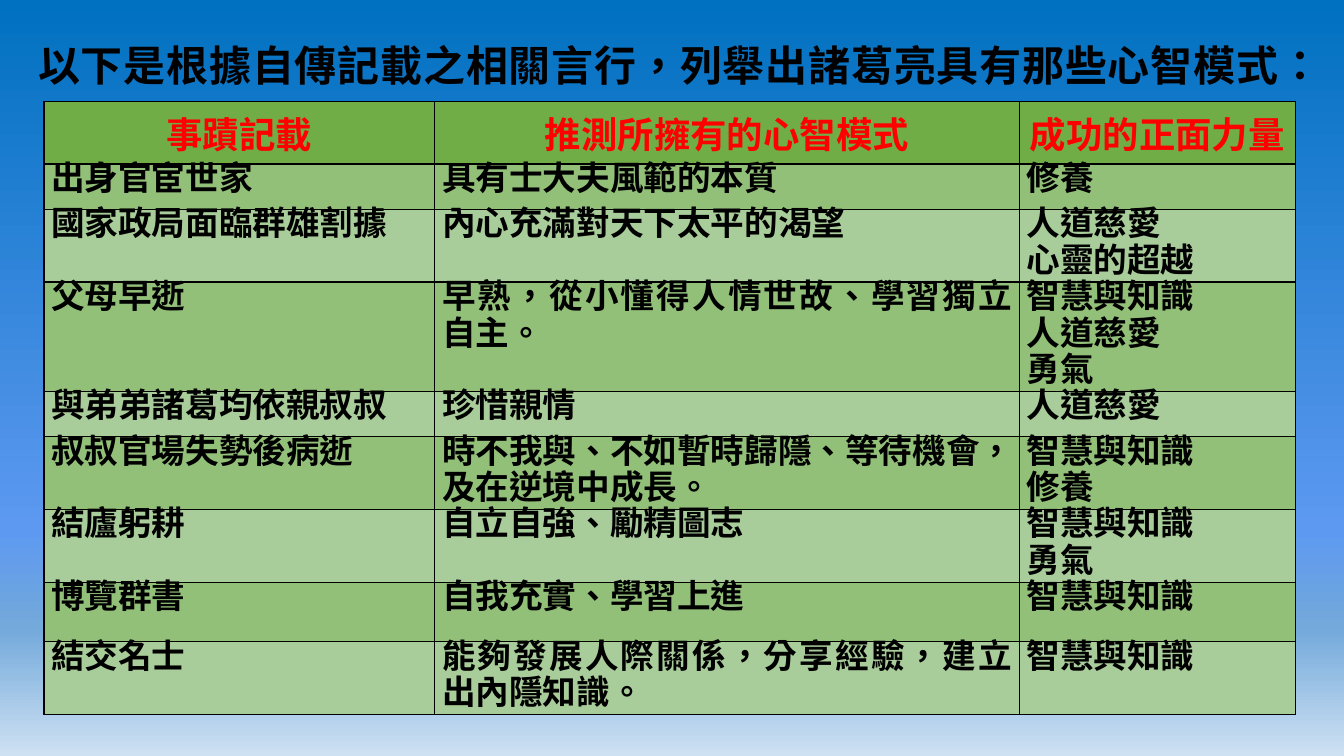
from dataclasses import dataclass

from lxml import etree
from pptx import Presentation
from pptx.dml.color import RGBColor
from pptx.enum.text import MSO_AUTO_SIZE, PP_ALIGN
from pptx.oxml.ns import qn
from pptx.util import Cm, Pt

LEFT, MID, JUST = PP_ALIGN.LEFT, PP_ALIGN.CENTER, PP_ALIGN.JUSTIFY
GROW = MSO_AUTO_SIZE.SHAPE_TO_FIT_TEXT


@dataclass(frozen=True)
class Theme:
    font: str = "Noto Sans CJK SC"
    ink: str = "000000"
    red: str = "FF0000"
    head: str = "70AD47"
    bands: tuple = ("92C079", "A9CD9A")
    sky: tuple = ((0, "0070C0"), (70, "5D99F1"), (83, "73A9DB"), (100, "CEE1F2"))
    title_size: int = 30
    head_size: int = 26
    body_size: int = 24
    lead: int = 26
    rule: int = 1


TITLE = "以下是根據自傳記載之相關言行，列舉出諸葛亮具有那些心智模式："
HEADS = ("事蹟記載", "推測所擁有的心智模式", "成功的正面力量")
ROWS = (
    ("出身官宦世家", "具有士大夫風範的本質", "修養"),
    ("國家政局面臨群雄割據", "內心充滿對天下太平的渴望", "人道慈愛\n心靈的超越"),
    ("父母早逝", "早熟，從小懂得人情世故、學習獨立自主。", "智慧與知識\n人道慈愛\n勇氣"),
    ("與弟弟諸葛均依親叔叔", "珍惜親情", "人道慈愛"),
    ("叔叔官場失勢後病逝", "時不我與、不如暫時歸隱、等待機會，及在逆境中成長。", "智慧與知識\n修養"),
    ("結廬躬耕", "自立自強、勵精圖志", "智慧與知識\n勇氣"),
    ("博覽群書", "自我充實、學習上進", "智慧與知識"),
    ("結交名士", "能夠發展人際關係，分享經驗，建立出內隱知識。", "智慧與知識"),
)
WIDTHS = (9.85, 14.73, 6.96)
HEIGHTS = (1.2, 1.14, 1.5, 2.2, 1.14, 1.5, 1.5, 1.5, 1.5)
RAGGED = (4, 1)  # body cell whose full first line is not stretched


def write(frame, text, font, size, color, align=LEFT, lead=None):
    """Fill a text frame with one bold paragraph per line of text."""
    for i, line in enumerate(text.split("\n")):
        para = frame.add_paragraph() if i else frame.paragraphs[0]
        para.alignment = align
        if lead:
            para.line_spacing = Pt(lead)
        para._p.get_or_add_pPr().set("hangingPunct", "1")
        run = para.add_run()
        run.text = line
        run.font.name = font
        run.font.size = Pt(size)
        run.font.bold = True
        run.font.color.rgb = RGBColor.from_string(color)
        props = run._r.get_or_add_rPr()
        props.set("lang", "zh-TW")
        etree.SubElement(props, qn("a:ea")).set("typeface", font)


class Page:
    def __init__(self, slide, theme):
        self.slide = slide
        self.theme = theme

    def back(self):
        """Paint the vertical gradient behind the slide."""
        fill = self.slide.background.fill
        fill.gradient()
        fill.gradient_angle = 270
        stops = self.slide.element.find(".//" + qn("a:gsLst"))
        for old in list(stops):
            stops.remove(old)
        for place, color in self.theme.sky:
            stop = etree.SubElement(stops, qn("a:gs"), pos=str(place * 1000))
            etree.SubElement(stop, qn("a:srgbClr"), val=color)

    def text(self, words, x, y, w, h, **style):
        frame = self.slide.shapes.add_textbox(Cm(x), Cm(y), Cm(w), Cm(h)).text_frame
        frame.word_wrap = True
        frame.auto_size = GROW
        write(frame, words, self.theme.font, **style)

    def border(self, cell):
        """Rule all four sides of a cell."""
        props = cell._tc.get_or_add_tcPr()
        for i, side in enumerate(("lnL", "lnR", "lnT", "lnB")):
            line = etree.Element(qn("a:" + side), w=str(Pt(self.theme.rule)))
            fill = etree.SubElement(line, qn("a:solidFill"))
            etree.SubElement(fill, qn("a:srgbClr"), val=self.theme.ink)
            props.insert(i, line)

    def cell(self, cell, words, fill, **style):
        cell.fill.solid()
        cell.fill.fore_color.rgb = RGBColor.from_string(fill)
        self.border(cell)
        write(cell.text_frame, words, self.theme.font, **style)

    def table(self, heads, rows, x, y, widths, heights):
        look = self.theme
        grid = self.slide.shapes.add_table(
            len(heights), len(widths), Cm(x), Cm(y),
            Cm(sum(widths)), Cm(sum(heights))).table
        grid.horz_banding = False
        for col, width in zip(grid.columns, widths):
            col.width = Cm(width)
        for row, height in zip(grid.rows, heights):
            row.height = Cm(height)
        # Header row
        for c, words in enumerate(heads):
            self.cell(grid.cell(0, c), words, look.head,
                      size=look.head_size, color=look.red, align=MID)
        # Banded body rows
        for r, row in enumerate(rows):
            for c, words in enumerate(row):
                cell = grid.cell(r + 1, c)
                # Side margins leave room for 17 full-width characters
                cell.margin_left, cell.margin_right = Cm(0.18), Cm(0.1)
                cell.margin_top = cell.margin_bottom = 0
                loose = c == 2 or (r, c) == RAGGED
                if not loose:
                    cell.margin_right = Cm(0.18)
                self.cell(cell, words, look.bands[r % 2],
                          size=look.body_size, color=look.ink, lead=look.lead,
                          align=LEFT if loose else JUST)


def main():
    deck = Presentation()
    deck.slide_width, deck.slide_height = Cm(33.87), Cm(19.05)
    theme = Theme()
    page = Page(deck.slides.add_slide(deck.slide_layouts[6]), theme)
    page.back()
    # Mind-set table
    page.table(HEADS, ROWS, 1.11, 2.55, WIDTHS, HEIGHTS)
    # Title above it
    page.text(TITLE, 0.71, 0.86, 31.83, 1.55,
              size=theme.title_size, color=theme.ink, align=JUST)
    deck.save("out.pptx")


if __name__ == "__main__":
    main()
